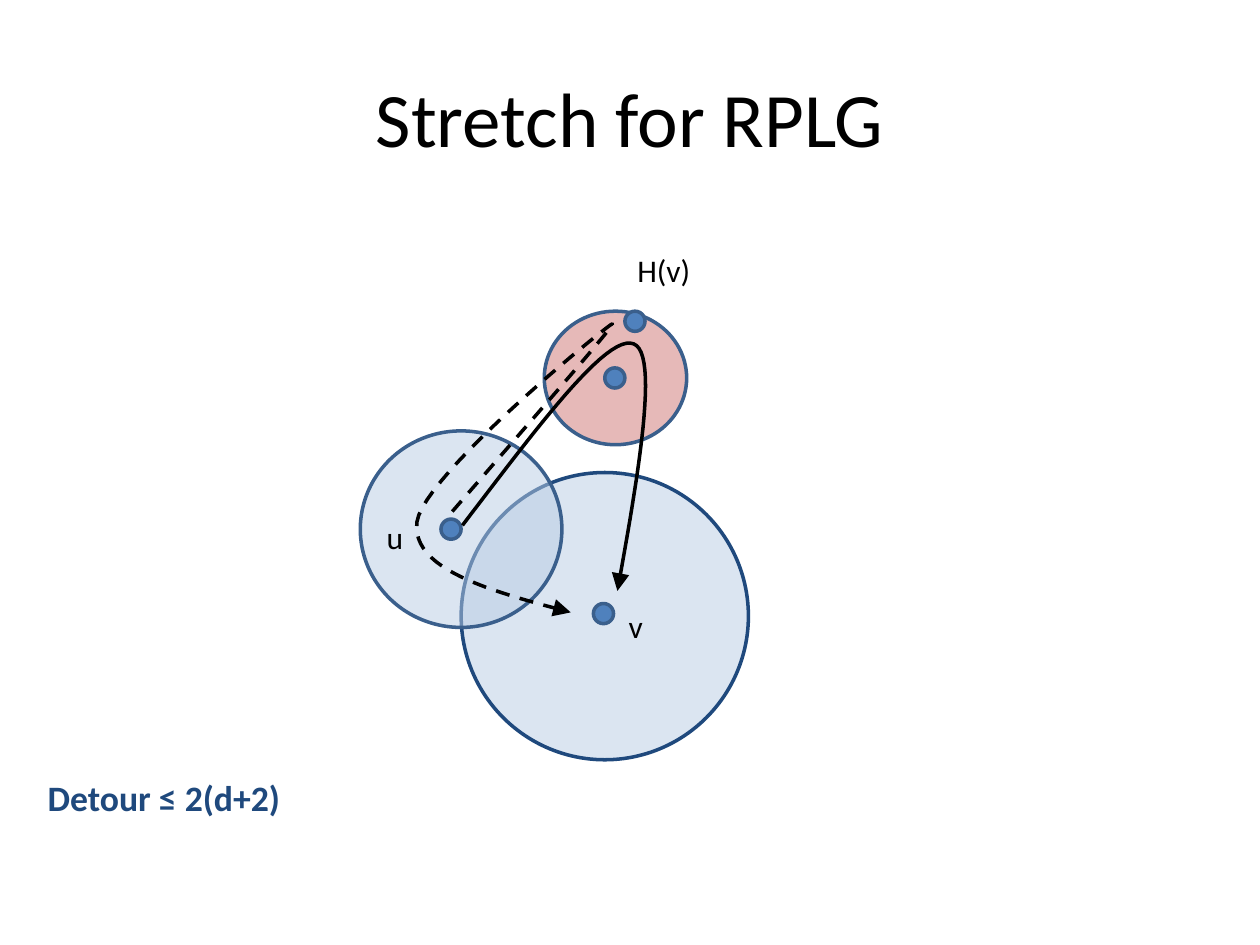
from pptx import Presentation
from pptx.dml.color import RGBColor
from pptx.enum import dml, shapes, text
from pptx.oxml.ns import qn
from pptx.util import Inches, Pt
from lxml import etree

BLACK = RGBColor(0, 0, 0)
NAVY = RGBColor(0x1F, 0x49, 0x7D)
OUTLINE = RGBColor(0x3A, 0x5F, 0x8C)
NODE = RGBColor(0x4F, 0x81, 0xBD)
PINK = RGBColor(0xE6, 0xB9, 0xB8)
PALE_BLUE = RGBColor(0xB9, 0xCD, 0xE5)
NODE_SIZE = 0.16
STEPS = 24

prs = Presentation()
prs.slide_width, prs.slide_height = Inches(10), Inches(7.5)
s = prs.slides.add_slide(prs.slide_layouts[6])


def add_text(words, box, size, color=BLACK, bold=False, wrap=True):
    tb = s.shapes.add_textbox(*map(Inches, box))
    tf = tb.text_frame
    tf.word_wrap = wrap
    r = tf.paragraphs[0].add_run()
    r.text = words
    r.font.name, r.font.size, r.font.bold = "Calibri", Pt(size), bold
    r.font.color.rgb = color
    return tf


def bezier(p0, p1, p2, p3):
    """Points along a cubic curve given in inches, without its start."""
    for i in range(1, STEPS + 1):
        t = i / STEPS
        yield tuple(Inches((1 - t) ** 3 * a + 3 * (1 - t) ** 2 * t * b
                           + 3 * (1 - t) * t ** 2 * c + t ** 3 * d)
                    for a, b, c, d in zip(p0, p1, p2, p3))


# Title and conclusion
tf = add_text("Stretch for RPLG", (0.5, 0.3, 9, 1.25), 44)
tf.vertical_anchor = text.MSO_ANCHOR.MIDDLE
tf.paragraphs[0].alignment = text.PP_ALIGN.CENTER

tf = add_text("Detour ≤ 2(d+2)", (0.28, 5.56, 9.45, 1.21), 20.4, NAVY, True)
tf.margin_top = Inches(0.39)
tf.paragraphs[0].line_spacing = 1.6

# Neighbourhoods, then the nodes: box, fill, outline, opacity in percent
ellipses = [
    ((4.32, 2.47, 1.13, 1.06), PINK, OUTLINE, 100),
    ((3.66, 3.75, 2.28, 2.28), PALE_BLUE, NAVY, 50),
    ((2.86, 3.42, 1.6, 1.56), PALE_BLUE, OUTLINE, 50),
]
for x, y in [(4.8, 2.92), (4.71, 4.79), (3.5, 4.12), (4.96, 2.47)]:
    ellipses.append(((x, y, NODE_SIZE, NODE_SIZE), NODE, OUTLINE, 100))

for box, fill, line, opacity in ellipses:
    sp = s.shapes.add_shape(shapes.MSO_SHAPE.OVAL, *map(Inches, box))
    sp.shadow.inherit = False
    sp.fill.solid()
    sp.fill.fore_color.rgb = fill
    sp.line.color.rgb = line
    sp.line.width = Pt(2)
    if opacity < 100:
        color = sp._element.spPr.find(qn("a:solidFill"))[0]
        etree.SubElement(color, qn("a:alpha")).set("val", str(opacity * 1000))

# Routes from u to v: start, curves (two controls and an end), dashed
routes = [
    ((3.67, 4.17),
     [((4.25, 3.41), (4.82, 2.64), (5.03, 2.73)),
      ((5.23, 2.81), (5.07, 3.75), (4.9, 4.69))], False),
    ((3.59, 4.06),
     [((4.24, 3.31), (4.9, 2.56), (4.86, 2.57)),
      ((4.81, 2.59), (3.37, 3.76), (3.31, 4.14)),
      ((3.26, 4.52), (3.89, 4.69), (4.53, 4.86))], True),
]
for start, curves, dashed in routes:
    fb = s.shapes.build_freeform(*map(Inches, start))
    for curve in curves:
        fb.add_line_segments(list(bezier(start, *curve)), close=False)
        start = curve[-1]
    sp = fb.convert_to_shape()
    sp.shadow.inherit = False
    sp.fill.background()
    sp.line.color.rgb = BLACK
    sp.line.width = Pt(2)
    if dashed:
        sp.line.dash_style = dml.MSO_LINE.DASH
    ln = sp._element.spPr.find(qn("a:ln"))
    etree.SubElement(ln, qn("a:tailEnd"), type="triangle", w="lg", len="lg")

# Node labels
for label, box, wrap in [("u", (2.97, 4.06, 0.34, 0.4), False),
                         ("v", (4.89, 4.77, 0.32, 0.4), False),
                         ("H(v)", (4.96, 1.94, 0.67, 0.4), True)]:
    tf = add_text(label, box, 18, wrap=wrap)
    tf.auto_size = text.MSO_AUTO_SIZE.SHAPE_TO_FIT_TEXT

prs.save("out.pptx")
